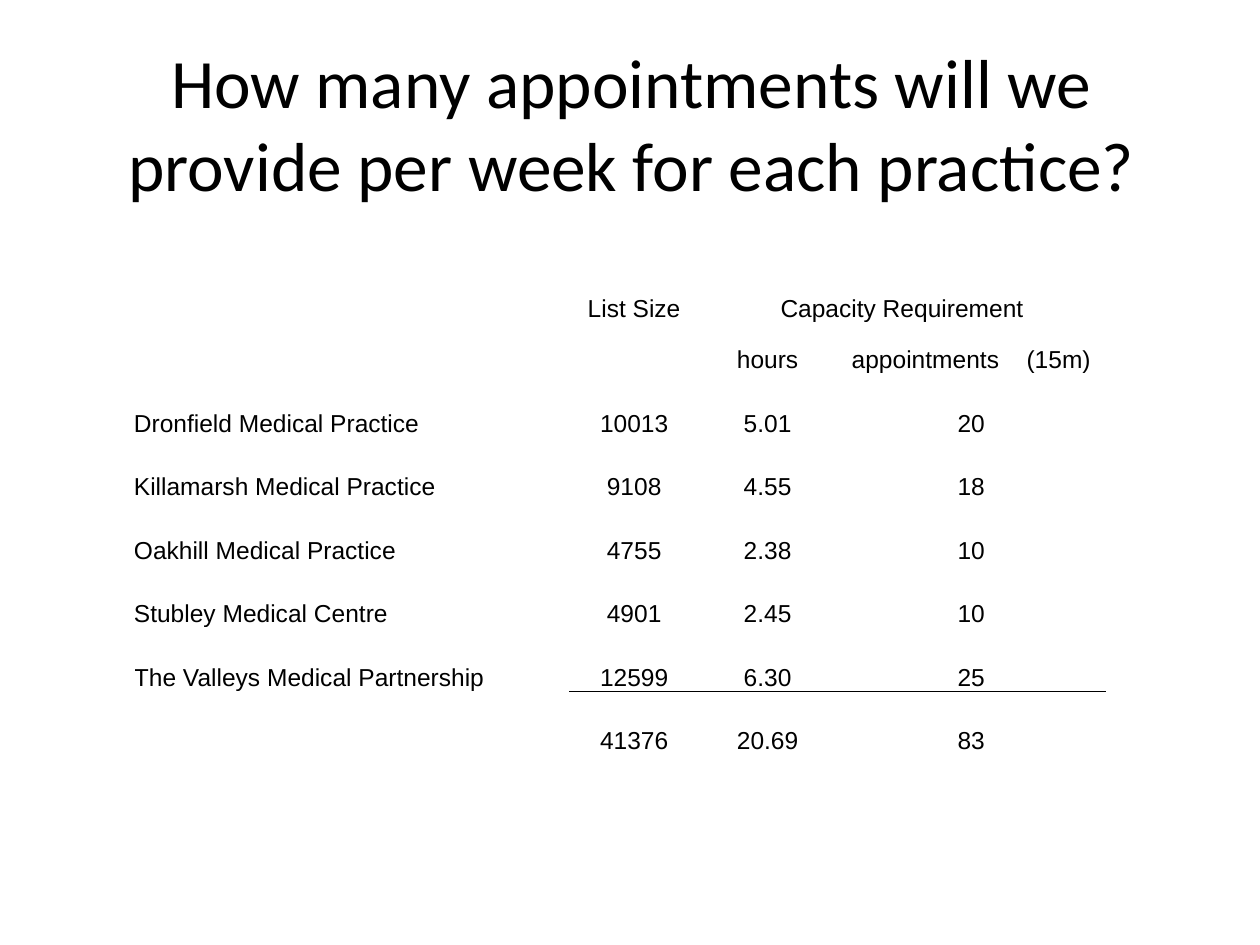
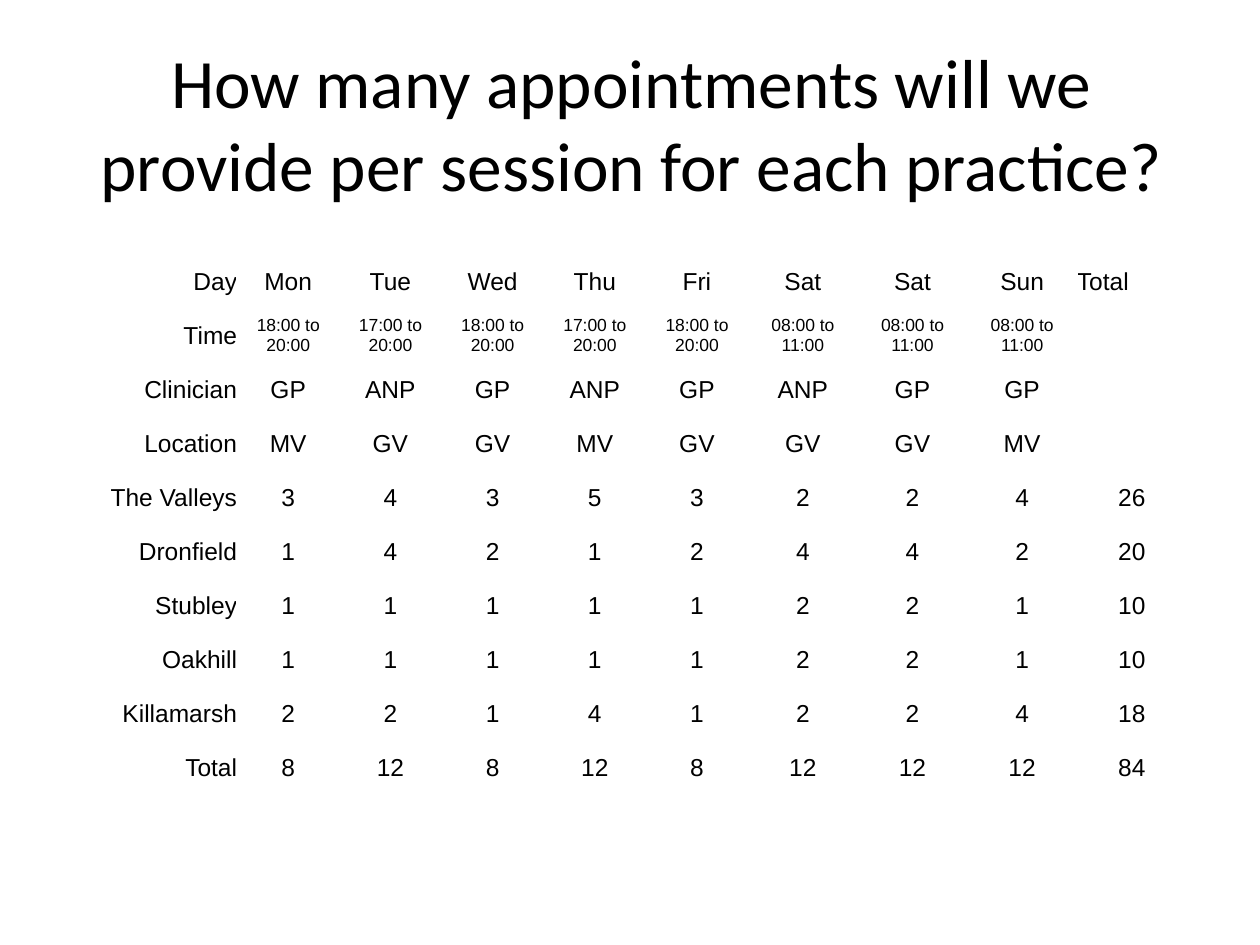
import pptx
import pptx.dml.color
import pptx.enum.text
import pptx.oxml
import pptx.oxml.ns
import pptx.util

Cm = pptx.util.Cm
Pt = pptx.util.Pt
ALIGN = pptx.enum.text.PP_ALIGN
ANCHOR = pptx.enum.text.MSO_ANCHOR

BLACK = "000000"
TITLE_BOX = (1.3, 0.87, 22.86, 3.18)
RULE_ROW = 6
GAP = 11.7

CAPACITY = [
    ["", "List Size", "Capacity Requirement", ""],
    ["", "", "hours", "appointments (15m)"],
    ["Dronfield Medical Practice", "10013", "5.01", "20"],
    ["Killamarsh Medical Practice", "9108", "4.55", "18"],
    ["Oakhill Medical Practice", "4755", "2.38", "10"],
    ["Stubley Medical Centre", "4901", "2.45", "10"],
    ["The Valleys Medical Partnership", "12599", "6.30", "25"],
    ["", "41376", "20.69", "83"],
]

EARLY, LATE, WEEKEND = "17:00 to 20:00", "18:00 to 20:00", "08:00 to 11:00"
SESSIONS = [
    ["Day", "Mon", "Tue", "Wed", "Thu", "Fri", "Sat", "Sat", "Sun", "Total"],
    ["Time", LATE, EARLY, LATE, EARLY, LATE, WEEKEND, WEEKEND, WEEKEND, ""],
    ["Clinician", "GP", "ANP", "GP", "ANP", "GP", "ANP", "GP", "GP", ""],
    ["Location", "MV", "GV", "GV", "MV", "GV", "GV", "GV", "MV", ""],
    ["The Valleys", 3, 4, 3, 5, 3, 2, 2, 4, 26],
    ["Dronfield", 1, 4, 2, 1, 2, 4, 4, 2, 20],
    ["Stubley", 1, 1, 1, 1, 1, 2, 2, 1, 10],
    ["Oakhill", 1, 1, 1, 1, 1, 2, 2, 1, 10],
    ["Killamarsh", 2, 2, 1, 4, 1, 2, 2, 4, 18],
    ["Total", 8, 12, 8, 12, 8, 12, 12, 12, 84],
]


def rgb(color):
    return pptx.dml.color.RGBColor.from_string(color)


def write(tf, text, size=14, font="Arial", color=BLACK, align=ALIGN.CENTER):
    p = tf.paragraphs[0]
    p.alignment = align
    p.font.size = Pt(size)
    r = p.add_run()
    r.text = text
    r.font.size = Pt(size)
    r.font.name = font
    r.font.color.rgb = rgb(color)
    return r


def add_title(s, text, box):
    tf = s.shapes.add_textbox(*map(Cm, box)).text_frame
    tf.word_wrap = True
    tf.vertical_anchor = ANCHOR.MIDDLE
    write(tf, text, size=39.6, font="Calibri")


def set_border(cell, side, color=BLACK, width=0.5):
    ln = pptx.oxml.parse_xml(
        f'<a:{side} {pptx.oxml.ns.nsdecls("a")} w="{Pt(width)}">'
        f'<a:solidFill><a:srgbClr val="{color}"/></a:solidFill></a:{side}>')
    cell._tc.get_or_add_tcPr().insert(0, ln)


def add_grid(s, data, left, top, widths, heights, anchor, style):
    shape = s.shapes.add_table(len(data), len(widths), Cm(left), Cm(top),
                               Cm(sum(widths)), Cm(sum(heights)))
    table = shape.table
    table.first_row = table.horz_banding = False
    for col, width in zip(table.columns, widths):
        col.width = Cm(width)
    for row, height in zip(table.rows, heights):
        row.height = Cm(height)
    for i, values in enumerate(data):
        for j, value in enumerate(values):
            cell = table.cell(i, j)
            cell.margin_left = cell.margin_right = 0
            cell.margin_top = cell.margin_bottom = 0
            cell.vertical_anchor = anchor
            cell.fill.background()
            if value != "":
                write(cell.text_frame, str(value), **style(i, j))
    return table


def capacity_style(i, j):
    return {"align": ALIGN.LEFT if j == 0 else ALIGN.CENTER}


def session_style(i, j):
    if j == 0:
        return {"align": ALIGN.RIGHT}
    if (i, j) == (0, 9):
        return {"align": ALIGN.LEFT}
    return {"size": 10 if i == 1 else 14}


def capacity_slide(s):
    add_title(s, "How many appointments will we provide per week for each practice?", TITLE_BOX)
    table = add_grid(s, CAPACITY, 2.7, 5.13, [8.79, 2.59, 2.79, 5.42],
                     [1.37, 1.04] + [1.28] * 6, ANCHOR.BOTTOM, capacity_style)
    table.cell(0, 2).merge(table.cell(0, 3))
    for j in range(1, 4):
        set_border(table.cell(RULE_ROW, j), "lnB")
        set_border(table.cell(RULE_ROW + 1, j), "lnT")

    tf = table.cell(1, 3).text_frame
    label, unit = CAPACITY[1][3].split()
    tf.paragraphs[0].runs[0].text = label
    space = write(tf, " ")
    space.font._element.set("spc", str(round(GAP * 100)))
    write(tf, unit)


def session_slide(s):
    add_title(s, "How many appointments will we provide per session for each practice?", TITLE_BOX)
    add_grid(s, SESSIONS, 1.5, 5.13, [3.28] + [2.06] * 5 + [2.21] * 4,
             [1.09] * len(SESSIONS), ANCHOR.MIDDLE, session_style)


def main():
    prs = pptx.Presentation()
    prs.slide_width, prs.slide_height = Cm(25.4), Cm(19.05)
    for build in (capacity_slide, session_slide):
        build(prs.slides.add_slide(prs.slide_layouts[6]))
    prs.save("out.pptx")


if __name__ == "__main__":
    main()
